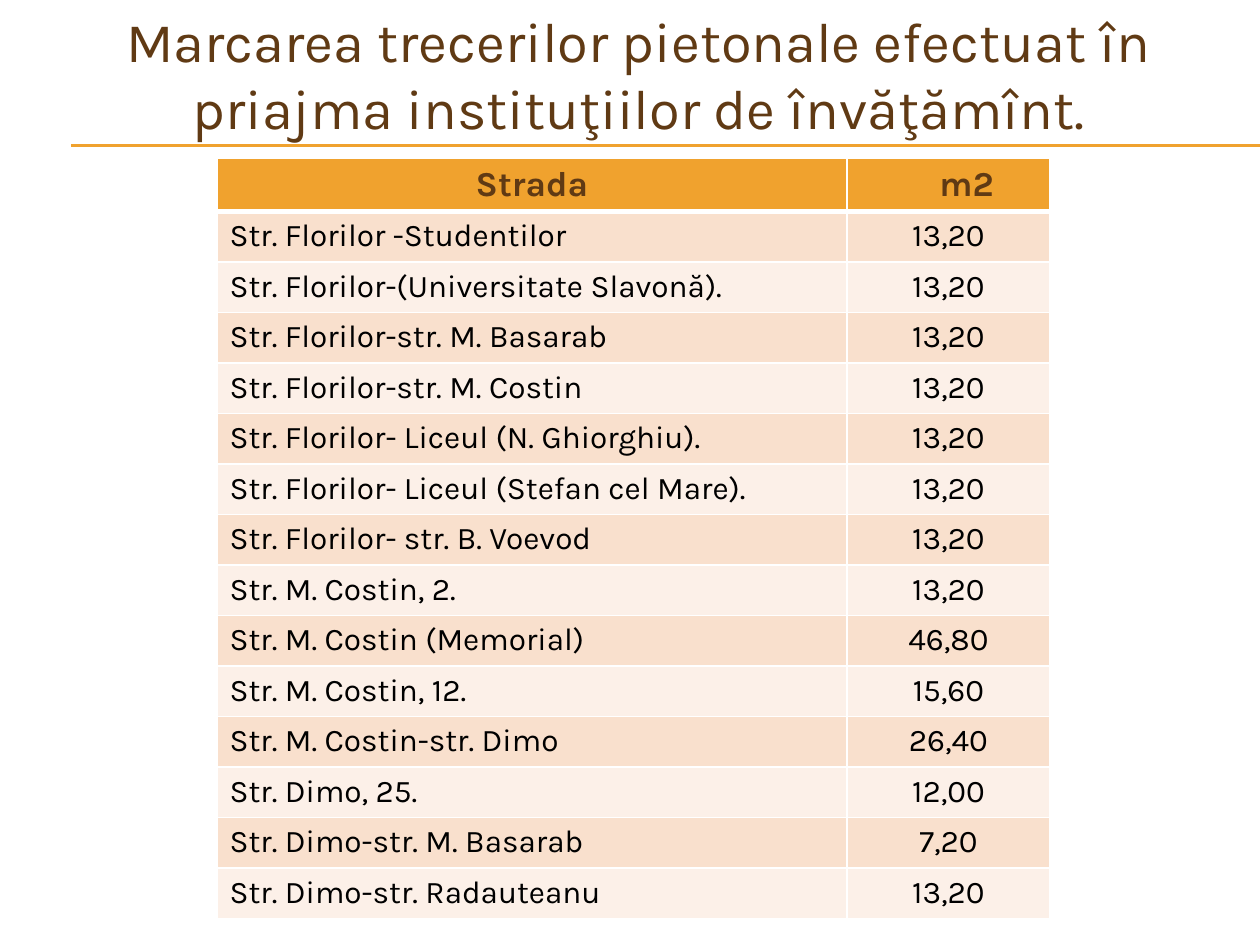
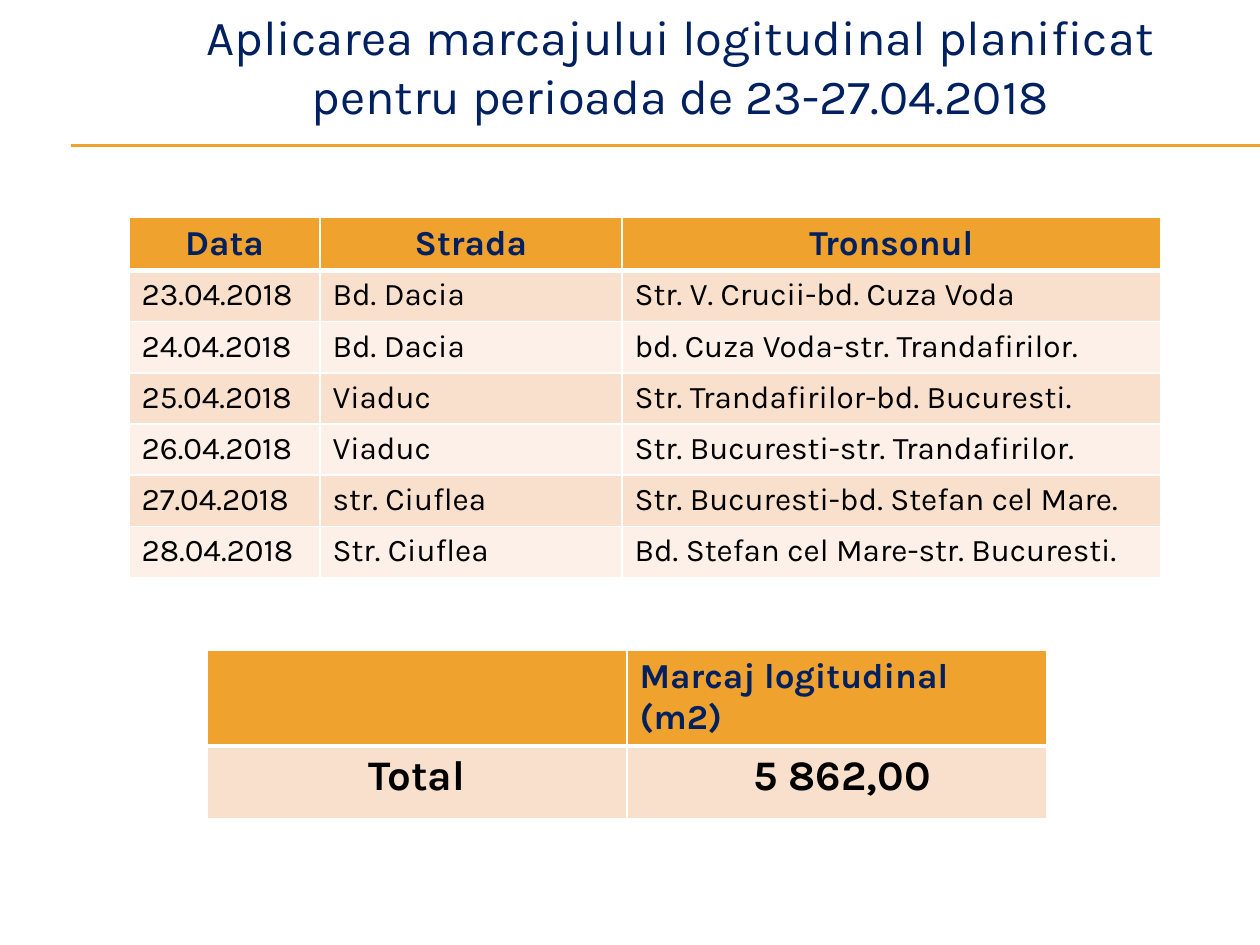
from lxml.etree import SubElement as Sub
from pptx import Presentation as Deck
from pptx.dml.color import RGBColor as Rgb
from pptx.enum.shapes import MSO_CONNECTOR as Link
from pptx.enum.text import MSO_ANCHOR as Anchor, MSO_AUTO_SIZE as Fit, PP_ALIGN as Align
from pptx.oxml.ns import qn
from pptx.util import Pt

SCALE = 914400 / 126
FONT = "Karla"
HUES = {
    "gold": "F0A22E",
    "brown": "603A14",
    "navy": "002060",
    "black": "000000",
    "white": "FFFFFF",
    "peach": "F9E0CD",
    "cream": "FCF0E8",
}
WIDE, HIGH = 1260, 945
INSET = 13
LEFT, MID = Align.LEFT, Align.CENTER

STREETS = [
    ("Strada", "m2"),
    ("Str. Florilor -Studentilor", "13,20"),
    ("Str. Florilor-(Universitate Slavonă).", "13,20"),
    ("Str. Florilor-str. M. Basarab", "13,20"),
    ("Str. Florilor-str. M. Costin", "13,20"),
    ("Str. Florilor- Liceul (N. Ghiorghiu).", "13,20"),
    ("Str. Florilor- Liceul (Stefan cel Mare).", "13,20"),
    ("Str. Florilor- str. B. Voevod", "13,20"),
    ("Str. M. Costin, 2.", "13,20"),
    ("Str. M. Costin (Memorial)", "46,80"),
    ("Str. M. Costin, 12.", "15,60"),
    ("Str. M. Costin-str. Dimo", "26,40"),
    ("Str. Dimo, 25.", "12,00"),
    ("Str. Dimo-str. M. Basarab", "7,20"),
    ("Str. Dimo-str. Radauteanu", "13,20"),
]
PLAN = [
    ("Data", "Strada", "Tronsonul"),
    ("23.04.2018", "Bd. Dacia", "Str. V. Crucii-bd. Cuza Voda"),
    ("24.04.2018", "Bd. Dacia", "bd. Cuza Voda-str. Trandafirilor."),
    ("25.04.2018", "Viaduc", "Str. Trandafirilor-bd. Bucuresti."),
    ("26.04.2018", "Viaduc", "Str. Bucuresti-str. Trandafirilor."),
    ("27.04.2018", "str. Ciuflea", "Str. Bucuresti-bd. Stefan cel Mare."),
    ("28.04.2018", "Str. Ciuflea", "Bd. Stefan cel Mare-str. Bucuresti."),
]
TOTAL = [("", "Marcaj logitudinal (m2)"), ("Total", "5 862,00")]


def px(num):
    return round(num * SCALE)


def hue(name):
    return Rgb.from_string(HUES[name])


def style(frame, size, color, align, bold=False):
    for para in frame.paragraphs:
        para.alignment = align
        for run in para.runs:
            font = run.font
            font.name, font.size, font.bold = FONT, Pt(size), bold
            font.color.rgb = hue(color)


def add_rule(slide, top):
    rule = slide.shapes.add_connector(
        Link.STRAIGHT, px(71), px(top), px(WIDE), px(top))
    rule.line.color.rgb = hue("gold")
    rule.line.width = Pt(0.75)
    Sub(rule._element.spPr, qn("a:effectLst"))


def add_page(deck, text, size, color, box):
    slide = deck.slides.add_slide(deck.slide_layouts[5])
    for top in (145, 146):
        add_rule(slide, top)
    title = slide.shapes.title
    title.left, title.top, title.width, title.height = map(px, box)
    frame = title.text_frame
    frame.text = text
    frame.word_wrap = True
    frame.auto_size = Fit.NONE
    frame.vertical_anchor = Anchor.TOP
    style(frame, size, color, MID)
    return slide


def edge(cell, row):
    props = cell._tc.get_or_add_tcPr()
    thick = {"T": 3 if row == 1 else 1, "B": 3 if row == 0 else 1}
    for side in "LRTB":
        line = Sub(props, qn(f"a:ln{side}"), w=str(Pt(thick.get(side, 1))))
        fill = Sub(line, qn("a:solidFill"))
        Sub(fill, qn("a:srgbClr"), val=HUES["white"])


def add_grid(slide, data, left, top, cols, high, head, color, heads, body,
             size=18, bold=False):
    shape = slide.shapes.add_table(
        len(data), len(cols), px(left), px(top), px(sum(cols)), px(high))
    table = shape.table
    for col, wide in zip(table.columns, cols):
        col.width = px(wide)
    rest = (high - head) / (len(data) - 1)
    for row, texts in enumerate(data):
        table.rows[row].height = px(rest if row else head)
        for col, text in enumerate(texts):
            cell = table.cell(row, col)
            cell.text = text
            edge(cell, row)
            cell.fill.solid()
            if row:
                cell.fill.fore_color.rgb = hue("peach" if row % 2 else "cream")
                style(cell.text_frame, size, "black", body[col], bold)
            else:
                cell.fill.fore_color.rgb = hue("gold")
                style(cell.text_frame, 20, color, heads[col], True)
    return table


def indent(cell, num):
    cell.margin_left = px(INSET + num)


def add_cross(deck):
    slide = add_page(
        deck,
        "Marcarea trecerilor pietonale efectuat în priajma instituţiilor de învăţămînt.",
        32, "brown", (98, 0, 1082, 145))
    table = add_grid(slide, STREETS, 217, 158, (630, 203), 760, 53,
                     "brown", (MID, MID), (LEFT, MID))
    indent(table.cell(0, 1), 36)


def add_plan(deck):
    slide = add_page(
        deck,
        "Aplicarea marcajului logitudinal planificat pentru perioada de 23-27.04.2018",
        28, "navy", (143, 0, 1074, 131))
    add_grid(slide, PLAN, 129, 217, (191, 302, 539), 360, 53,
             "navy", (MID,) * 3, (LEFT,) * 3)
    table = add_grid(slide, TOTAL, 207, 650, (420, 420), 169, 96,
                     "navy", (LEFT, LEFT), (MID, MID), 24, True)
    indent(table.cell(1, 1), 10)


def main():
    deck = Deck()
    deck.slide_width, deck.slide_height = px(WIDE), px(HIGH)
    add_cross(deck)
    add_plan(deck)
    deck.save("out.pptx")


if __name__ == "__main__":
    main()
